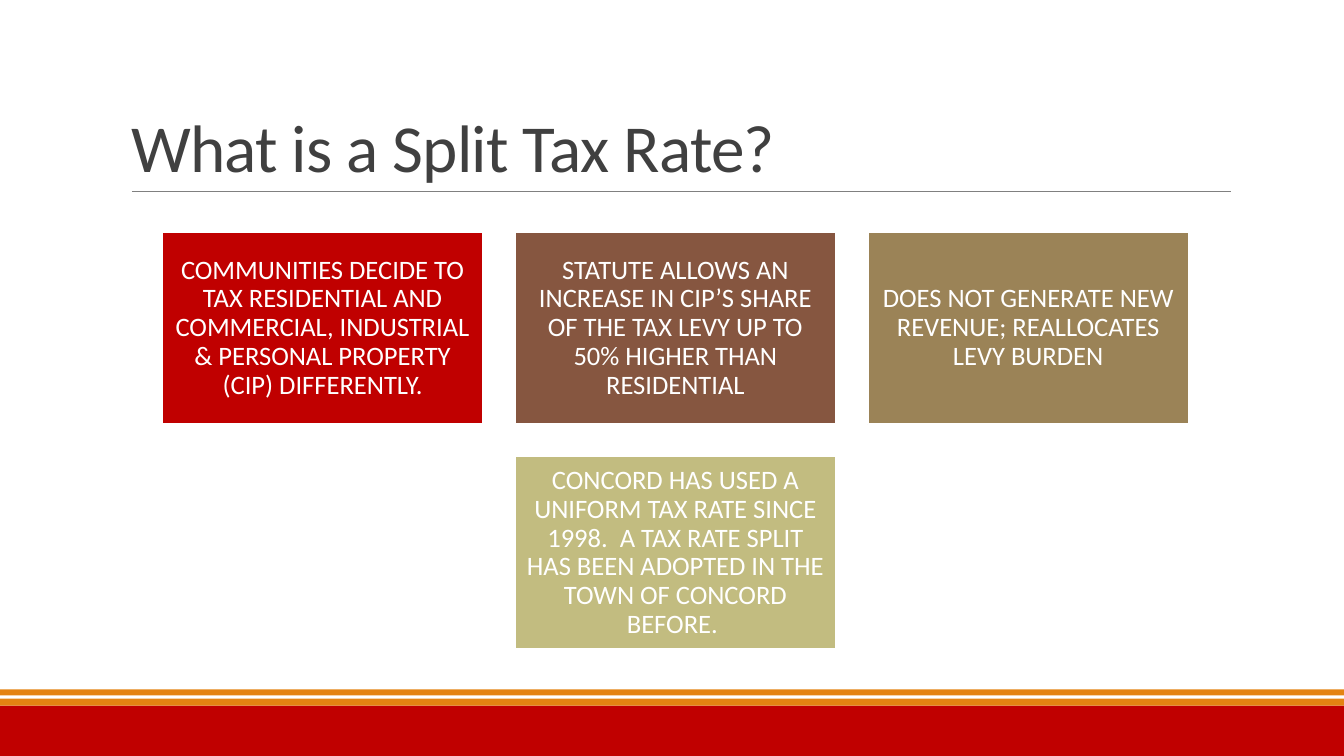
from pptx import Presentation
from pptx.dml.color import RGBColor
from pptx.enum.shapes import MSO_CONNECTOR, MSO_SHAPE
from pptx.enum.text import MSO_ANCHOR, MSO_AUTO_SIZE, PP_ALIGN
from pptx.oxml.ns import qn
from pptx.util import Pt
from lxml import etree

RECTANGLE = MSO_SHAPE.RECTANGLE
STRAIGHT = MSO_CONNECTOR.STRAIGHT
MIDDLE, BOTTOM = MSO_ANCHOR.MIDDLE, MSO_ANCHOR.BOTTOM
CENTER, LEFT = PP_ALIGN.CENTER, PP_ALIGN.LEFT
NO_AUTOFIT = MSO_AUTO_SIZE.NONE

COLORS = {
    "white": "FFFFFF", "ink": "404040", "rule": "808080",
    "red": "C00000", "orange": "E48312",
    "brown": "865640", "tan": "9B8357", "sand": "C2BC80",
}
FONT = "Calibri"
TITLE = "What is a Split Tax Rate?"
CARD_ROWS = [
    [
        ("red", "COMMUNITIES DECIDE TO TAX RESIDENTIAL AND COMMERCIAL, INDUSTRIAL & PERSONAL PROPERTY (CIP) DIFFERENTLY."),
        ("brown", "STATUTE ALLOWS AN INCREASE IN CIP’S SHARE OF THE TAX LEVY UP TO 50% HIGHER THAN RESIDENTIAL"),
        ("tan", "DOES NOT GENERATE NEW REVENUE; REALLOCATES LEVY BURDEN"),
    ],
    [
        ("sand", "CONCORD HAS USED A UNIFORM TAX RATE SINCE 1998.  A TAX RATE SPLIT HAS BEEN ADOPTED IN THE TOWN OF CONCORD BEFORE. "),
    ],
]
FOOTER_BANDS = [("red", 504, 36), ("orange", 499, 5), ("orange", 492.5, 4.3)]

PAGE_WIDTH, PAGE_HEIGHT = 960, 540
CARD_WIDTH, CARD_HEIGHT = 229, 137.5
CARD_GAP = 23
CARDS_CENTER, CARDS_TOP = 482.4, 165.6


def rgb(name):
    return RGBColor.from_string(COLORS[name])


def add_block(page, left, top, width, height, color):
    block = page.shapes.add_shape(RECTANGLE, Pt(left), Pt(top), Pt(width), Pt(height))
    block.shadow.inherit = False
    block.fill.solid()
    block.fill.fore_color.rgb = rgb(color)
    block.line.fill.background()
    return block


def write(box, text, size, color, align, anchor, spacing, margins):
    frame = box.text_frame
    frame.word_wrap = True
    frame.auto_size = NO_AUTOFIT
    frame.vertical_anchor = anchor
    frame.margin_left = frame.margin_right = Pt(margins[0])
    frame.margin_top = frame.margin_bottom = Pt(margins[1])
    para = frame.paragraphs[0]
    para.alignment = align
    para.line_spacing = spacing
    span = para.add_run()
    span.text = text
    span.font.name = FONT
    span.font.size = Pt(size)
    span.font.color.rgb = rgb(color)
    return span


def add_footer(page):
    for color, top, height in FOOTER_BANDS:
        add_block(page, 0, top, PAGE_WIDTH, height, color)


def add_title(page):
    title = page.shapes.title
    title.left, title.top, title.width, title.height = Pt(86.4), Pt(22.3), Pt(792), Pt(114.5)
    span = write(title, TITLE, 48, "ink", LEFT, BOTTOM, 0.85, (7.2, 3.6))
    span.font._element.set("spc", "-50")
    rule = page.shapes.add_connector(STRAIGHT, Pt(94.3), Pt(136.8), Pt(879), Pt(136.8))
    rule.line.color.rgb = rgb("rule")
    rule.line.width = Pt(0.5)
    etree.SubElement(rule._element.spPr, qn("a:effectLst"))


def add_cards(page):
    for row, cards in enumerate(CARD_ROWS):
        row_width = len(cards) * (CARD_WIDTH + CARD_GAP) - CARD_GAP
        top = CARDS_TOP + row * (CARD_HEIGHT + CARD_GAP)
        for column, (color, text) in enumerate(cards):
            left = CARDS_CENTER - row_width / 2 + column * (CARD_WIDTH + CARD_GAP)
            card = add_block(page, left, top, CARD_WIDTH, CARD_HEIGHT, color)
            card.line.color.rgb = rgb("white")
            card.line.width = Pt(1.25)
            write(card, text, 19, "white", CENTER, MIDDLE, 0.9, (5.7, 5.7))


def main():
    deck = Presentation()
    deck.slide_width, deck.slide_height = Pt(PAGE_WIDTH), Pt(PAGE_HEIGHT)
    page = deck.slides.add_slide(deck.slide_layouts[5])
    add_footer(page)
    add_title(page)
    add_cards(page)
    deck.save("out.pptx")


if __name__ == "__main__":
    main()
